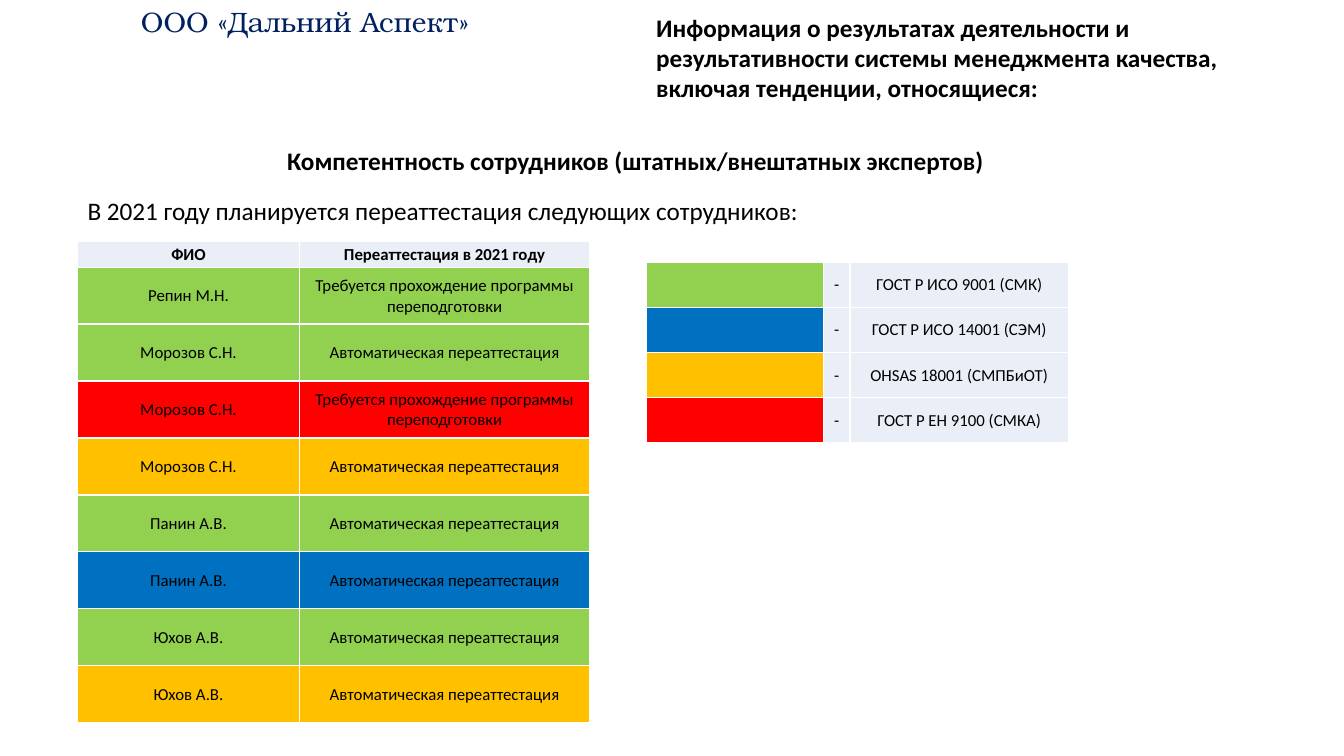
from lxml import etree
from pptx import Presentation
from pptx import util as u
from pptx.dml.color import RGBColor
from pptx.enum import text as t
from pptx.oxml import ns

PX = 9144  # 100 px to the inch
GREEN, BLUE, AMBER, RED = "92D050", "0070C0", "FFC000", "FF0000"
PALE, WHITE, BLACK, NAVY = "EAEFF7", "FFFFFF", "000000", "002060"


def px(n):
    return u.Emu(round(n * PX))


def hue(code):
    return RGBColor.from_string(code)


class Deck:
    font = "Calibri"

    def __init__(self, wide, high):
        self.prs = Presentation()
        self.prs.slide_width, self.prs.slide_height = px(wide), px(high)
        self.slide = self.prs.slides.add_slide(self.prs.slide_layouts[6])

    def run(self, para, words, size, bold=False, color=BLACK, font=None):
        run = para.add_run()
        run.text = words
        run.font.name = font or self.font
        run.font.size = u.Pt(size)
        run.font.bold = bold
        run.font.color.rgb = hue(color)

    def text(self, box, words, size=18, wrap=True, **style):
        frame = self.slide.shapes.add_textbox(*map(px, box)).text_frame
        frame.word_wrap = wrap
        frame.auto_size = t.MSO_AUTO_SIZE.SHAPE_TO_FIT_TEXT
        self.run(frame.paragraphs[0], words, size, **style)

    def edge(self, cell):
        props = cell._tc.get_or_add_tcPr()
        for i, side in enumerate(("lnL", "lnR", "lnT", "lnB")):
            line = etree.Element(ns.qn("a:" + side), w=str(u.Pt(1)))
            fill = etree.SubElement(line, ns.qn("a:solidFill"))
            etree.SubElement(fill, ns.qn("a:srgbClr"), val=WHITE)
            props.insert(i, line)

    def cell(self, cell, words, fill, bold):
        cell.fill.solid()
        cell.fill.fore_color.rgb = hue(fill)
        cell.vertical_anchor = t.MSO_ANCHOR.MIDDLE
        cell.margin_left = cell.margin_right = cell.margin_top = px(1)
        cell.margin_bottom = 0
        self.edge(cell)
        if words:
            para = cell.text_frame.paragraphs[0]
            para.alignment = t.PP_ALIGN.CENTER
            self.run(para, words, 12, bold)

    def table(self, box, cols, rows, head=None):
        """Each row is a list of (words, fill); head is the first row's height."""
        shape = self.slide.shapes.add_table(len(rows), len(cols), *map(px, box))
        grid = shape.table
        grid.first_row = bool(head)
        grid.horz_banding = False
        for col, wide in zip(grid.columns, cols):
            col.width = px(wide)
        high = (box[3] - head) / (len(rows) - 1) if head else box[3] / len(rows)
        for r, row in enumerate(rows):
            top = bool(head) and r == 0
            grid.rows[r].height = px(head if top else high)
            for c, (words, fill) in enumerate(row):
                self.cell(grid.cell(r, c), words, fill, top)


def main():
    deck = Deck(1333, 750)

    # Headings
    deck.text((130, 0, 359, 44), "ООО «Дальний Аспект»", 20, wrap=False,
              color=NAVY, font="TeX Gyre Bonum")
    deck.text((275, 139, 717, 40),
              "Компетентность сотрудников (штатных/внештатных экспертов)",
              wrap=False, bold=True)
    deck.text((641, 7, 667, 101),
              "Информация о результатах деятельности и результативности системы "
              "менеджмента качества, включая тенденции, относящиеся:", bold=True)
    deck.text((77, 189, 1181, 40),
              "В 2021 году планируется переаттестация следующих сотрудников:")

    # Staff due in 2021
    auto = "Автоматическая переаттестация"
    study = "Требуется прохождение программы переподготовки"
    staff = [
        ("ФИО", "Переаттестация в 2021 году", PALE),
        ("Репин М.Н.", study, GREEN),
        ("Морозов С.Н.", auto, GREEN),
        ("Морозов С.Н.", study, RED),
        ("Морозов С.Н.", auto, AMBER),
        ("Панин А.В.", auto, GREEN),
        ("Панин А.В.", auto, BLUE),
        ("Юхов А.В.", auto, GREEN),
        ("Юхов А.В.", auto, AMBER),
    ]
    deck.table((77, 239, 508, 478), (220, 288),
               [[(name, fill), (task, fill)] for name, task, fill in staff], head=26)

    # Colour key
    norms = [
        (GREEN, "ГОСТ Р ИСО 9001 (СМК)"),
        (BLUE, "ГОСТ Р ИСО 14001 (СЭМ)"),
        (AMBER, "OHSAS 18001 (СМПБиОТ)"),
        (RED, "ГОСТ Р ЕН 9100 (СМКА)"),
    ]
    deck.table((641, 260, 419, 179), (176, 26, 217),
               [[("", fill), ("-", PALE), (norm, PALE)] for fill, norm in norms])

    deck.prs.save("out.pptx")


if __name__ == "__main__":
    main()
